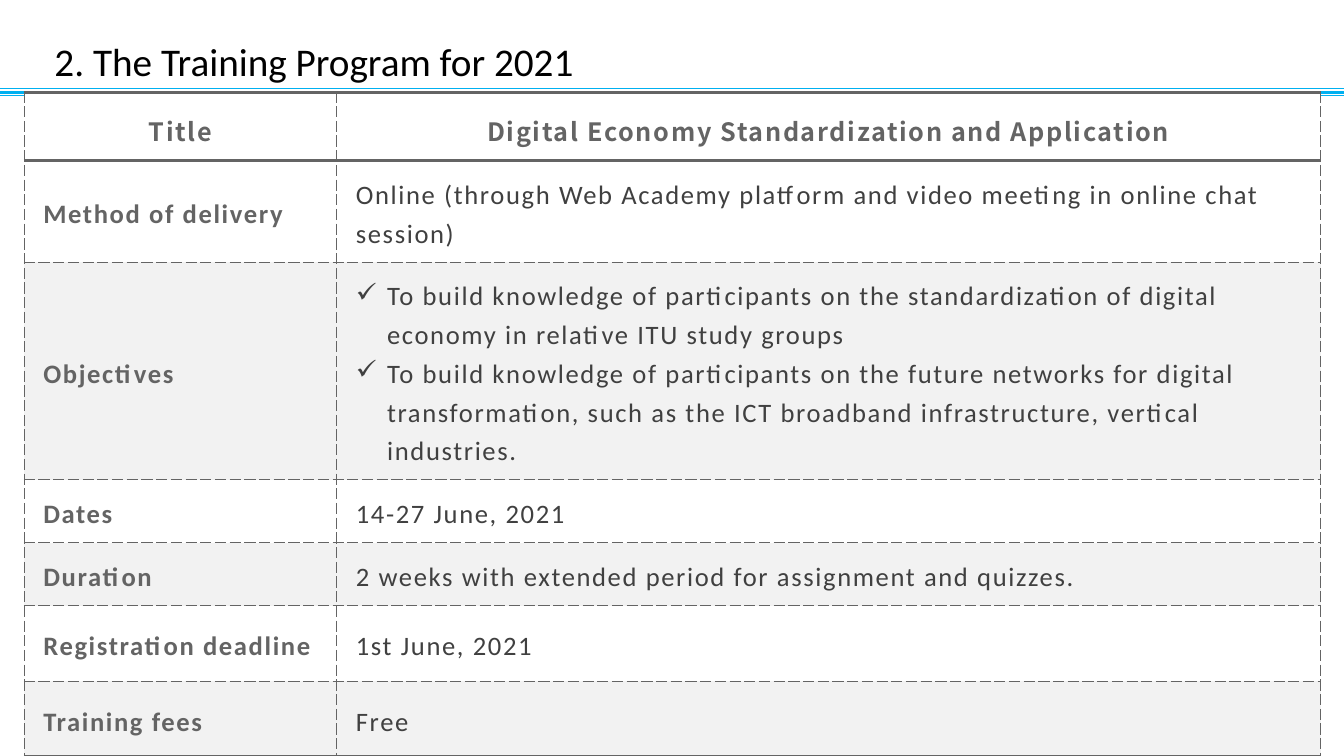
from lxml.etree import SubElement
from pptx import Presentation
from pptx.dml.color import RGBColor
from pptx.enum.shapes import MSO_CONNECTOR
from pptx.enum.text import MSO_ANCHOR, PP_ALIGN
from pptx.oxml import parse_xml
from pptx.oxml.ns import nsdecls, qn
from pptx.util import Inches, Pt

BLACK = RGBColor(0, 0, 0)
WHITE = RGBColor(0xFF, 0xFF, 0xFF)
GRAY = RGBColor(0x64, 0x64, 0x64)
DARK = RGBColor(0x40, 0x40, 0x40)
LIGHT = RGBColor(0xF2, 0xF2, 0xF2)
CYAN = RGBColor(0x00, 0xB0, 0xF0)

WIDTH = 13.33
COLS = [3.1, 9.76]
# Row height, label, paragraphs
ROWS = [
    (0.65, "Title", ["Digital Economy Standardization and Application"]),
    (1, "Method of delivery",
     ["Online (through Web Academy platform and video meeting in online chat session)"]),
    (2.14, "Objectives",
     ["To build knowledge of participants on the standardization of digital "
      "economy in relative ITU study groups",
      "To build knowledge of participants on the future networks for digital "
      "transformation, such as the ICT broadband infrastructure, vertical industries."]),
    (0.62, "Dates", ["14-27 June, 2021"]),
    (0.62, "Duration", ["2 weeks with extended period for assignment and quizzes."]),
    (0.75, "Registration deadline", ["1st June, 2021"]),
    (0.75, "Training fees", ["Free"]),
]


def write(frame, texts, size=19, font="Calibri", color=DARK, bold=False,
          align=PP_ALIGN.LEFT, spacing=1.2, track=0, bullet=None):
    for i, text in enumerate(texts):
        para = frame.paragraphs[0] if i == 0 else frame.add_paragraph()
        para.alignment = align
        para.line_spacing = spacing
        run = para.add_run()
        run.text = text
        run.font.size = Pt(size)
        run.font.name = font
        run.font.bold = bold
        run.font.color.rgb = color
        if track:
            run.font._element.set("spc", str(round(track * 100)))
        if bullet:
            props = para._p.get_or_add_pPr()
            props.set("marL", str(Inches(0.31)))
            props.set("indent", str(-Inches(0.31)))
            SubElement(props, qn("a:buChar")).set("char", bullet)


def border(cell, top, bottom):
    """Dashed thin sides; a heavy side is solid."""
    props = cell._tc.get_or_add_tcPr()
    sides = [("lnL", False), ("lnR", False), ("lnT", top), ("lnB", bottom)]
    for i, (side, heavy) in enumerate(sides):
        width, dash = (2.25, "solid") if heavy else (0.75, "sysDash")
        props.insert(i, parse_xml(
            f'<a:{side} {nsdecls("a")} w="{Pt(width)}"><a:solidFill>'
            f'<a:srgbClr val="{GRAY}"/></a:solidFill>'
            f'<a:prstDash val="{dash}"/></a:{side}>'))


def add_title(slide, left, top, width, height):
    title = slide.shapes.title
    title.left, title.top = Inches(left), Inches(top)
    title.width, title.height = Inches(width), Inches(height)
    title.text_frame.vertical_anchor = MSO_ANCHOR.TOP
    title.text_frame.word_wrap = True
    write(title.text_frame, ["2. The Training Program for 2021"], size=28,
          color=BLACK, spacing=1.0)


def add_rules(slide, left, top, width):
    for drop, weight in [(0.07, 1), (0.04, 2), (0, 1)]:
        y = Inches(top + drop)
        rule = slide.shapes.add_connector(
            MSO_CONNECTOR.STRAIGHT, Inches(left), y, Inches(left + width), y)
        rule.line.color.rgb = CYAN
        rule.line.width = Pt(weight)
        SubElement(rule._element.spPr, qn("a:effectLst"))


def add_grid(slide, left, top):
    high = sum(row[0] for row in ROWS)
    table = slide.shapes.add_table(
        len(ROWS), len(COLS), Inches(left), Inches(top),
        Inches(sum(COLS)), Inches(high)).table
    table.first_row = table.horz_banding = False
    for col, width in zip(table.columns, COLS):
        col.width = Inches(width)
    last = len(ROWS) - 1
    for r, (height, label, texts) in enumerate(ROWS):
        table.rows[r].height = Inches(height)
        head = r == 0
        for c, lines in enumerate([[label], texts]):
            cell = table.cell(r, c)
            cell.margin_left = cell.margin_right = Inches(0.19)
            cell.margin_top = cell.margin_bottom = Inches(0.12)
            cell.vertical_anchor = MSO_ANCHOR.MIDDLE
            cell.fill.solid()
            cell.fill.fore_color.rgb = LIGHT if r > 0 and r % 2 == 0 else WHITE
            border(cell, top=r < 2, bottom=r in (0, last))
            strong = head or c == 0
            write(cell.text_frame, lines, track=1.2, bold=strong,
                  size=18 if head else 19,
                  font="Noto Sans CJK SC" if head else "Calibri",
                  color=GRAY if strong else DARK,
                  align=PP_ALIGN.CENTER if head else PP_ALIGN.LEFT,
                  bullet="✓" if len(lines) > 1 else None)


def main():
    deck = Presentation()
    deck.slide_width, deck.slide_height = Inches(WIDTH), Inches(7.5)
    slide = deck.slides.add_slide(deck.slide_layouts[5])
    add_rules(slide, 0, 0.88, WIDTH)
    add_grid(slide, 0.24, 0.92)
    add_title(slide, 0.44, 0.32, 6.22, 0.57)
    deck.save("out.pptx")


if __name__ == "__main__":
    main()
